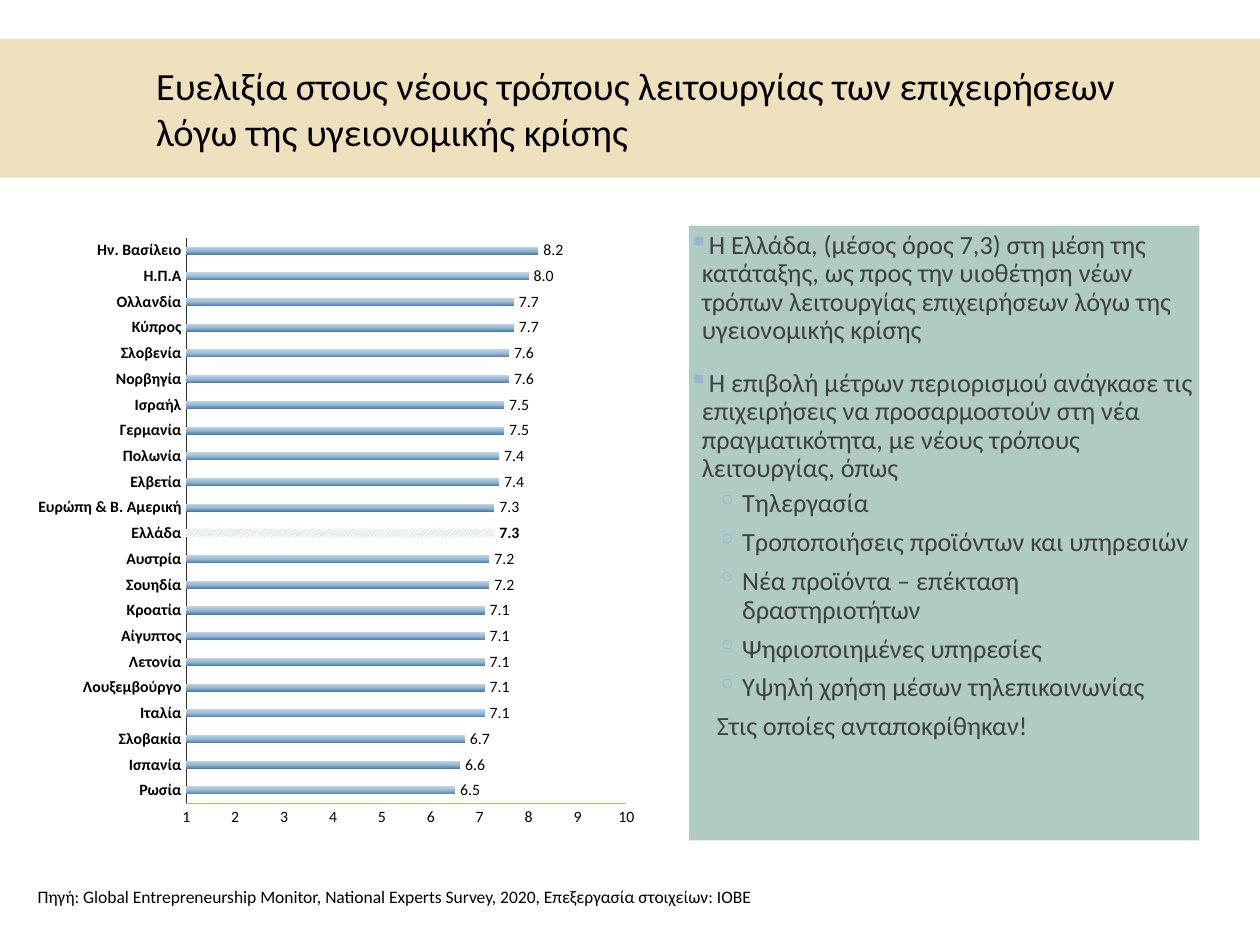
from copy import deepcopy
from dataclasses import dataclass

from pptx import Presentation, util as u
from pptx.chart.data import CategoryChartData
from pptx.dml.color import RGBColor
from pptx.enum import chart as ch, dml, shapes, text
from pptx.oxml import parse_xml
from pptx.oxml.ns import nsdecls, qn


@dataclass(frozen=True)
class Theme:
    font: str = "Calibri"
    black: str = "000000"
    body: str = "404040"
    band: str = "EFE0BE"
    panel: str = "B0CAC4"
    mark: str = "94B6D2"
    white: str = "FFFFFF"
    cat_line: str = "3C302A"
    val_line: str = "D0AF72"
    stops: tuple = ((0, "477DA9"), (0.48, "97B8D3"), (1, "BFD3E4"))
    title: int = 22
    main: int = 15
    note: int = 10
    tick: int = 9


# kind: left indent, first-line indent, space before, space after, bullet
KINDS = {
    "point": (0.1, -0.1, 12, 2, "▪"),
    "item": (0.42, -0.2, 2, 4, "◦"),
    "close": (0.22, 0, 2, 4, None),
}

NOTES = [
    ("point", "Η Ελλάδα, (μέσος όρος 7,3) στη μέση της κατάταξης, ως προς την υιοθέτηση "
              "νέων τρόπων λειτουργίας επιχειρήσεων λόγω της υγειονομικής κρίσης"),
    ("point", "Η επιβολή μέτρων περιορισμού ανάγκασε τις επιχειρήσεις να προσαρμοστούν "
              "στη νέα πραγματικότητα, με νέους τρόπους λειτουργίας, όπως"),
    ("item", "Τηλεργασία"),
    ("item", "Τροποποιήσεις προϊόντων και υπηρεσιών"),
    ("item", "Νέα προϊόντα – επέκταση δραστηριοτήτων"),
    ("item", "Ψηφιοποιημένες υπηρεσίες"),
    ("item", "Υψηλή χρήση μέσων τηλεπικοινωνίας"),
    ("close", "Στις οποίες ανταποκρίθηκαν!"),
]

SCORES = {
    "Ρωσία": 6.5, "Ισπανία": 6.6, "Σλοβακία": 6.7, "Ιταλία": 7.1,
    "Λουξεμβούργο": 7.1, "Λετονία": 7.1, "Αίγυπτος": 7.1, "Κροατία": 7.1,
    "Σουηδία": 7.2, "Αυστρία": 7.2, "Ελλάδα": 7.3, "Ευρώπη & Β. Αμερική": 7.3,
    "Ελβετία": 7.4, "Πολωνία": 7.4, "Γερμανία": 7.5, "Ισραήλ": 7.5,
    "Νορβηγία": 7.6, "Σλοβενία": 7.6, "Κύπρος": 7.7, "Ολλανδία": 7.7,
    "Η.Π.Α": 8.0, "Ην. Βασίλειο": 8.2,
}


def rgb(code):
    return RGBColor.from_string(code)


class Deck:
    """Places elements on a grid of 100 columns by 75 rows."""

    def __init__(self, theme):
        self.theme = theme
        self.prs = Presentation()
        self.prs.slide_width, self.prs.slide_height = u.Inches(10), u.Inches(7.5)
        self.slide = self.prs.slides.add_slide(self.prs.slide_layouts[6])

    def area(self, *cells):
        col, row = self.prs.slide_width / 100, self.prs.slide_height / 75
        return [round(n * step) for n, step in zip(cells, (col, row, col, row))]

    def style(self, font, size, color, bold=None):
        font.name, font.size, font.bold = self.theme.font, u.Pt(size), bold
        font.color.rgb = rgb(color)

    def rect(self, cells, color):
        box = self.slide.shapes.add_shape(shapes.MSO_SHAPE.RECTANGLE, *self.area(*cells))
        box.shadow.inherit = False
        box.fill.solid()
        box.fill.fore_color.rgb = rgb(color)
        box.line.fill.background()
        return box

    def label(self, cells, words, size):
        frame = self.slide.shapes.add_textbox(*self.area(*cells)).text_frame
        frame.word_wrap = True
        frame.text = words
        self.style(frame.paragraphs[0].runs[0].font, size, self.theme.black)

    def panel(self, cells, notes):
        frame = self.rect(cells, self.theme.panel).text_frame
        frame.word_wrap = True
        frame.vertical_anchor = text.MSO_ANCHOR.TOP
        frame.margin_left = frame.margin_right = 0
        frame.text = "\n".join(words for _, words in notes)
        for n, (para, (kind, _)) in enumerate(zip(frame.paragraphs, notes)):
            left, first, before, after, sign = KINDS[kind]
            para.alignment = text.PP_ALIGN.LEFT
            para.line_spacing = 0.9
            para.space_before, para.space_after = u.Pt(before if n else 0), u.Pt(after)
            self.bullet(para, left, first, sign)
            self.style(para.runs[0].font, self.theme.main, self.theme.body)

    def bullet(self, para, left, first, sign):
        props = para._p.get_or_add_pPr()
        props.set("marL", str(u.Inches(left)))
        props.set("indent", str(u.Inches(first)))
        if sign:
            props.append(parse_xml(f'<a:buClr {nsdecls("a")}>'
                                   f'<a:srgbClr val="{self.theme.mark}"/></a:buClr>'))
            props.append(parse_xml(f'<a:buChar {nsdecls("a")} char="{sign}"/>'))

    def axis(self, axis, color, bold):
        axis.has_major_gridlines = False
        axis.major_tick_mark = axis.minor_tick_mark = ch.XL_TICK_MARK.NONE
        axis.format.line.color.rgb = rgb(color)
        axis.format.line.width = u.Pt(0.75)
        self.style(axis.tick_labels.font, self.theme.tick, self.theme.black, bold)

    def bars(self, cells, scores, accent):
        t = self.theme
        data = CategoryChartData(number_format="0.0")
        data.categories = list(scores)
        data.add_series("Series 1", list(scores.values()))
        chart = self.slide.shapes.add_chart(
            ch.XL_CHART_TYPE.BAR_CLUSTERED, *self.area(*cells), data).chart
        chart.has_legend = chart.has_title = False
        self.style(chart.font, t.note, t.black)
        self.axis(chart.category_axis, t.cat_line, True)
        scale = chart.value_axis
        self.axis(scale, t.val_line, False)
        scale.minimum_scale, scale.maximum_scale, scale.major_unit = 1, 10, 1
        scale.tick_labels.number_format = "0"
        scale.tick_labels.number_format_is_linked = False

        plot = chart.plots[0]
        plot.gap_width, plot.vary_by_categories = 219, False
        series = plot.series[0]
        series.invert_if_negative = False
        self.fade(series)
        tags = series.data_labels
        tags.show_value = True
        tags.position = ch.XL_LABEL_POSITION.OUTSIDE_END
        tags.number_format, tags.number_format_is_linked = "#,##0.0", False
        self.style(tags.font, t.tick, t.black)

        point = series.points[list(scores).index(accent)]
        fill = point.format.fill
        fill.patterned()
        fill.pattern = dml.MSO_PATTERN.DARK_UPWARD_DIAGONAL
        fill.fore_color.rgb, fill.back_color.rgb = rgb(t.mark), rgb(t.white)
        self.style(point.data_label.font, t.tick, t.black, True)
        point.data_label.position = ch.XL_LABEL_POSITION.OUTSIDE_END
        self.inset(chart, x=0.26, y=0.02, w=0.71, h=0.92)

    def fade(self, series):
        """Fill the bars with the theme's stops, from bottom to top."""
        fill = series.format.fill
        fill.gradient()
        fill.gradient_angle = 90
        stops = series._element.find(".//" + qn("a:gsLst"))
        stops.append(deepcopy(stops[-1]))
        for stop, (place, color) in zip(fill.gradient_stops, self.theme.stops):
            stop.position, stop.color.rgb = place, rgb(color)

    def inset(self, chart, **shares):
        """Fix the inner plot area as shares of the chart."""
        plot = chart._chartSpace.find(".//" + qn("c:plotArea"))
        for old in plot.findall(qn("c:layout")):
            plot.remove(old)
        modes = '<c:xMode val="edge"/><c:yMode val="edge"/>'
        sizes = "".join(f'<c:{key} val="{val}"/>' for key, val in shares.items())
        plot.insert(0, parse_xml(
            f'<c:layout {nsdecls("c")}><c:manualLayout><c:layoutTarget val="inner"/>'
            f"{modes}{sizes}</c:manualLayout></c:layout>"))


def main():
    theme = Theme()
    deck = Deck(theme)
    top, tall = 17.9, 48.8
    deck.rect((0, 3.1, 100, 11), theme.band)
    deck.panel((54.7, top, 40.5, tall), NOTES)
    deck.label((2, 69.8, 63, 2.7), "Πηγή: Global Entrepreneurship Monitor, National Experts "
               "Survey, 2020, Επεξεργασία στοιχείων: ΙΟΒΕ", theme.note)
    deck.label((11.4, 4.4, 85, 8.4), "Ευελιξία στους νέους τρόπους λειτουργίας των "
               "επιχειρήσεων λόγω της υγειονομικής κρίσης", theme.title)
    deck.bars((2, top, 49.2, tall), SCORES, "Ελλάδα")
    deck.prs.save("out.pptx")


if __name__ == "__main__":
    main()
